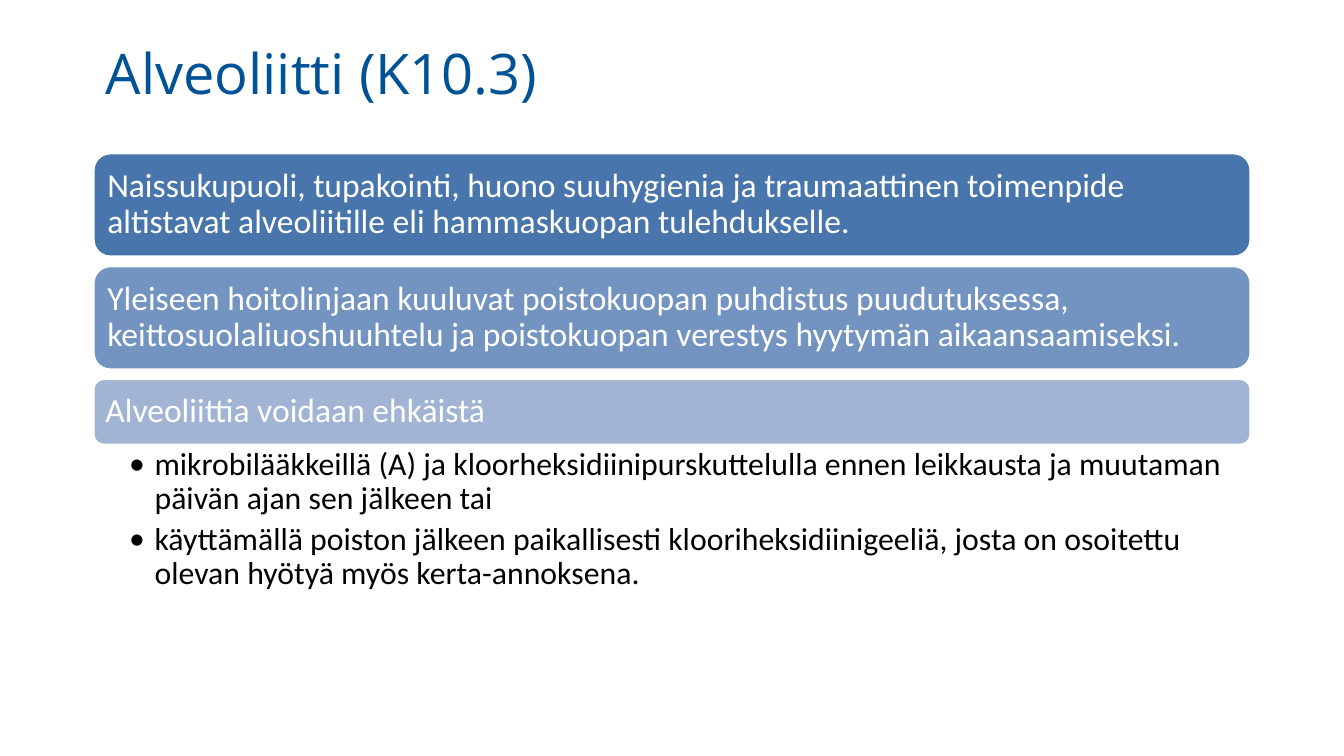
from lxml import etree
from pptx import Presentation
from pptx.dml.color import RGBColor
from pptx.enum.shapes import MSO_SHAPE as Preset
from pptx.enum.text import MSO_ANCHOR as Anchor, PP_ALIGN as Align
from pptx.oxml.ns import qn
from pptx.util import Inches, Pt

COLORS = {
    "title": "005296",
    "risk": "4875AC",
    "treatment": "7393C1",
    "prevention": "A2B4D4",
    "light": "FFFFFF",
    "dark": "000000",
}


def write(shape, *texts, size=18, font="Calibri", color="light", anchor=Anchor.MIDDLE,
          insets=(0.07, 0.07, 0.07, 0.07), spacing=0.9, after=0, bullet=None, indent=0.19):
    frame = shape.text_frame
    frame.word_wrap = True
    frame.vertical_anchor = anchor
    frame.margin_left, frame.margin_top, frame.margin_right, frame.margin_bottom = map(Inches, insets)
    for index, text in enumerate(texts):
        paragraph = frame.add_paragraph() if index else frame.paragraphs[0]
        paragraph.text = text
        paragraph.alignment = Align.LEFT
        paragraph.line_spacing = spacing
        paragraph.space_after = Pt(after)
        if bullet:
            properties = paragraph._p.get_or_add_pPr()
            properties.set("marL", str(Inches(indent)))
            properties.set("indent", str(-Inches(indent)))
            etree.SubElement(properties, qn("a:buFont")).set("typeface", font)
            etree.SubElement(properties, qn("a:buChar")).set("char", bullet)
        paragraph.font.size = Pt(size)
        paragraph.font.name = font
        paragraph.font.color.rgb = RGBColor.from_string(COLORS[color])


presentation = Presentation()
presentation.slide_width = Inches(10)
presentation.slide_height = presentation.slide_width * 9 // 16
slide = presentation.slides.add_slide(presentation.slide_layouts[6])

left = Inches(0.69)
width = presentation.slide_width - 2 * left
gap = Inches(0.06)

title = slide.shapes.add_textbox(left, Inches(0.24), width, Inches(0.61))
write(title, "Alveoliitti (K10.3)", size=30, font="Open Sans", color="title",
      insets=(0.1, 0.05, 0.1, 0.06), spacing=1.0)

cards = [
    ("risk", 0.78, "Naissukupuoli, tupakointi, huono suuhygienia ja traumaattinen toimenpide "
                   "altistavat alveoliitille eli hammaskuopan tulehdukselle."),
    ("treatment", 0.78, "Yleiseen hoitolinjaan kuuluvat poistokuopan puhdistus puudutuksessa, "
                        "keittosuolaliuoshuuhtelu ja poistokuopan verestys hyytymän aikaansaamiseksi."),
    ("prevention", 0.5, "Alveoliittia voidaan ehkäistä"),
]
top = Inches(1.135)
for fill, rows, text in cards:
    height = Inches(rows)
    card = slide.shapes.add_shape(Preset.ROUNDED_RECTANGLE, left, top, width, height)
    card.shadow.inherit = False
    card.fill.solid()
    card.fill.fore_color.rgb = RGBColor.from_string(COLORS[fill])
    card.line.color.rgb = RGBColor.from_string(COLORS["light"])
    card.line.width = Pt(2)
    write(card, text)
    top += height + gap

measures = slide.shapes.add_textbox(left, top - gap, width, Inches(1.16))
write(
    measures,
    "mikrobilääkkeillä (A) ja kloorheksidiinipurskuttelulla ennen leikkausta ja muutaman "
    "päivän ajan sen jälkeen tai",
    "käyttämällä poiston jälkeen paikallisesti klooriheksidiinigeeliä, josta on osoitettu "
    "olevan hyötyä myös kerta-annoksena.",
    size=17, color="dark", anchor=Anchor.TOP, insets=(0.27, 0.02, 0.13, 0.02),
    after=3.4, bullet="•",
)

presentation.save("out.pptx")
